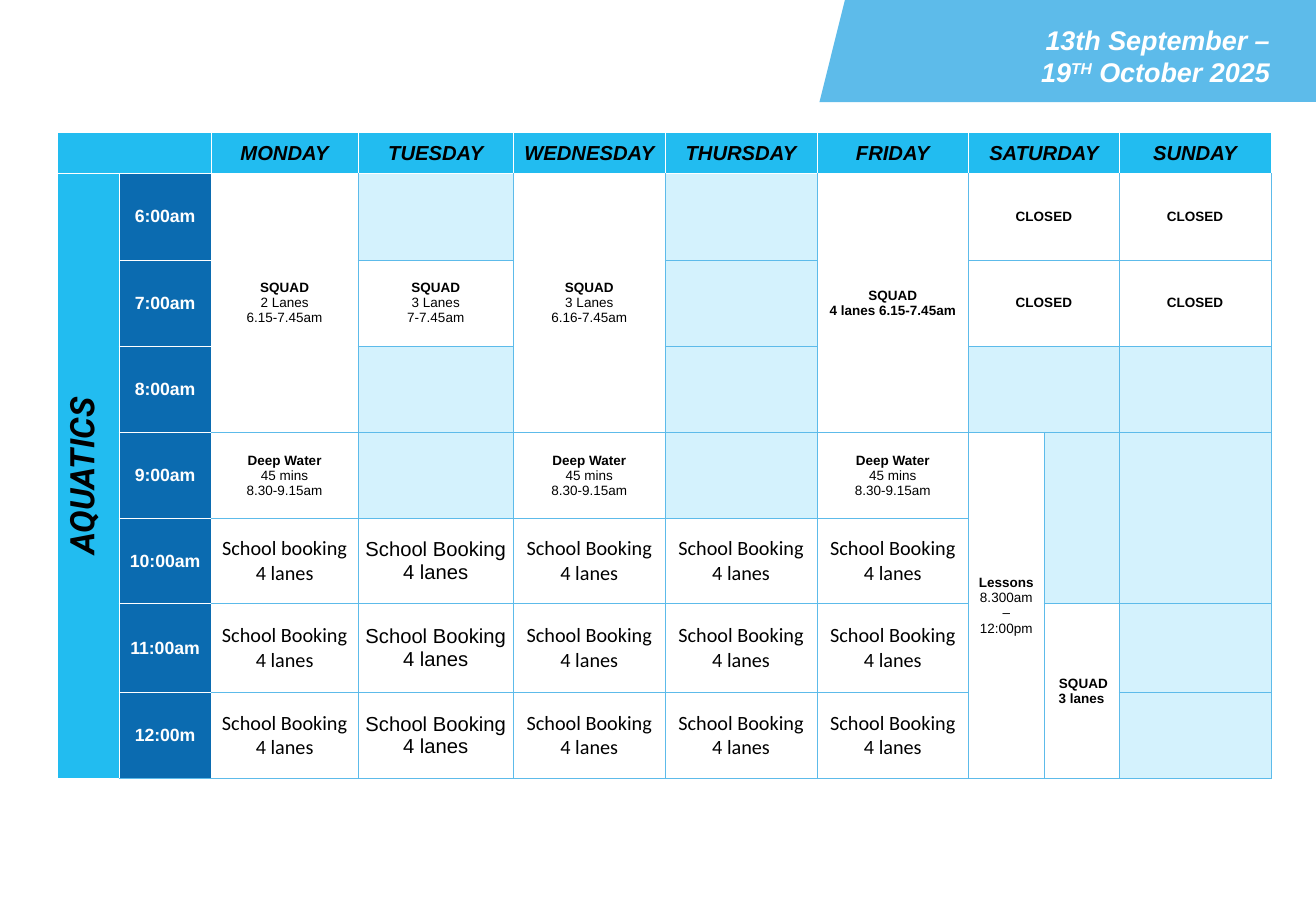
"""Build the weekly aquatics timetable slide."""
from typing import Any, NamedTuple

from lxml.etree import SubElement
from pptx import Presentation
from pptx.dml.color import RGBColor
from pptx.enum.shapes import MSO_SHAPE
from pptx.enum.text import MSO_ANCHOR, PP_ALIGN
from pptx.oxml.ns import qn
from pptx.table import Table, _Cell
from pptx.util import Inches, Pt

BANNER_BLUE = RGBColor(0x5D, 0xBB, 0xEA)
HEADER_BLUE = RGBColor(0x22, 0xBC, 0xF0)
TIME_BLUE = RGBColor(0x0B, 0x6B, 0xB0)
PALE_BLUE = RGBColor(0xD4, 0xF2, 0xFD)
WHITE = RGBColor(0xFF, 0xFF, 0xFF)
BLACK = RGBColor(0x00, 0x00, 0x00)

DATES = {"name": "Arial", "size": Pt(16), "bold": True, "italic": True}
DAY = DATES | {"size": Pt(12)}
AREA = DATES | {"name": "Roboto", "size": Pt(20)}
TIME = {"name": "Arial", "size": Pt(10.5), "bold": True}
STRONG = {"name": "Arial", "size": Pt(8), "bold": True}
DETAIL = STRONG | {"bold": False}
SCHOOL = {"name": "Calibri", "size": Pt(12), "bold": False}
SCHOOL_ARIAL = SCHOOL | {"name": "Arial"}

COLUMN_WIDTHS = (0.51, 0.76, 1.21, 1.28, 1.25, 1.25, 1.25, 0.62, 0.62, 1.25)
ROW_HEIGHTS = (0.34, 0.71, 0.71, 0.71, 0.71, 0.7, 0, 0.73, 0.71)
DAY_COLUMNS = {"MONDAY": 2, "TUESDAY": 3, "WEDNESDAY": 4, "THURSDAY": 5,
               "FRIDAY": 6, "SATURDAY": 7, "SUNDAY": 9}
TIME_ROWS = {"6:00am": 1, "7:00am": 2, "8:00am": 3, "9:00am": 4,
             "10:00am": 5, "11:00am": 7, "12:00m": 8}
TEN_AM_ROW = TIME_ROWS["10:00am"]
LAST_ROW = len(ROW_HEIGHTS) - 1


class Entry(NamedTuple):
    """A timetable cell: its place, lines, span and look."""
    row: int
    column: int
    lines: tuple[str, ...] = ()
    rows: int = 1
    columns: int = 1
    first: dict[str, Any] = STRONG
    rest: dict[str, Any] = DETAIL
    fill: RGBColor = WHITE
    ink: RGBColor = BLACK
    margins: tuple[float, float] = (0.05, 0)


def timetable_entries() -> list[Entry]:
    """List every cell that has text or spans several grid places."""
    entries = [
        Entry(0, 0, columns=2, fill=HEADER_BLUE),
        Entry(1, 0, ("AQUATICS",), 8, first=AREA, fill=HEADER_BLUE, margins=(0.04, 0.05)),
        Entry(1, 2, ("SQUAD", "2 Lanes", "6.15-7.45am"), 3),
        Entry(2, 3, ("SQUAD", "3 Lanes", "7-7.45am")),
        Entry(1, 4, ("SQUAD", "3 Lanes", "6.16-7.45am"), 3),
        Entry(1, 6, ("SQUAD", "4 lanes 6.15-7.45am"), 3, rest=STRONG),
        Entry(3, 7, columns=2, fill=PALE_BLUE),
        Entry(4, 7, ("Lessons", "8.300am – 12:00pm"), 5),
        Entry(4, 8, rows=2, fill=PALE_BLUE),
        Entry(4, 9, rows=2, fill=PALE_BLUE),
        Entry(6, 8, (" SQUAD", "3 lanes"), 3, rest=STRONG),
        Entry(6, 9, rows=2, fill=PALE_BLUE),
    ]
    for day, column in DAY_COLUMNS.items():
        span = 2 if day == "SATURDAY" else 1
        entries.append(Entry(0, column, (day,), columns=span, first=DAY,
                             fill=HEADER_BLUE, margins=(0.01, 0.02)))
        if day in ("SATURDAY", "SUNDAY"):
            entries += [Entry(row, column, ("CLOSED",), columns=span) for row in (1, 2)]
    for time, row in TIME_ROWS.items():
        span = 2 if row == TEN_AM_ROW else 1
        entries.append(Entry(row, 1, (time,), span, first=TIME, fill=TIME_BLUE, ink=WHITE))
        if row < TEN_AM_ROW:
            continue
        for column in range(2, 7):
            booking = "booking" if (row, column) == (TEN_AM_ROW, 2) else "Booking"
            entries.append(Entry(row, column, (f"School {booking} 4 lanes",), span,
                                 first=SCHOOL_ARIAL if column == 3 else SCHOOL))
    entries += [Entry(4, column, ("Deep Water", "45 mins", "8.30-9.15am"))
                for column in (2, 4, 6)]
    return entries


def apply_format(font: Any, values: dict[str, Any], ink: RGBColor) -> None:
    """Set font attributes and colour."""
    for attribute, value in values.items():
        setattr(font, attribute, value)
    font.color.rgb = ink


def add_borders(cell: _Cell, row: int, column: int) -> None:
    """Draw white edges around the headings and blue edges elsewhere."""
    heading = row == 0 or column <= 1
    white_edges = {
        "a:lnL": heading or column == 2,
        "a:lnR": heading,
        "a:lnT": heading or row == 1,
        "a:lnB": heading and row < LAST_ROW,
    }
    properties = cell._tc.get_or_add_tcPr()
    for edge, is_white in white_edges.items():
        line = SubElement(properties, qn(edge), w=str(Pt(0.5)))
        solid = SubElement(line, qn("a:solidFill"))
        SubElement(solid, qn("a:srgbClr"), val=str(WHITE if is_white else BANNER_BLUE))


def fill_entry(table: Table, entry: Entry) -> None:
    """Merge, colour and write one timetable cell."""
    cell = table.cell(entry.row, entry.column)
    if entry.rows * entry.columns > 1:
        cell.merge(table.cell(entry.row + entry.rows - 1, entry.column + entry.columns - 1))
    cell.fill.solid()
    cell.fill.fore_color.rgb = entry.fill
    side, end = map(Inches, entry.margins)
    cell.margin_left = cell.margin_right = side
    cell.margin_top = cell.margin_bottom = end
    for index, text in enumerate(entry.lines):
        paragraph = cell.text_frame.add_paragraph() if index else cell.text_frame.paragraphs[0]
        paragraph.alignment = PP_ALIGN.CENTER
        run = paragraph.add_run()
        run.text = text
        apply_format(run.font, entry.rest if index else entry.first, entry.ink)
    if entry.first is AREA:
        cell._tc.get_or_add_tcPr().set("vert", "vert270")


def add_timetable(shapes: Any) -> None:
    """Add the timetable grid and its entries."""
    table = shapes.add_table(len(ROW_HEIGHTS), len(COLUMN_WIDTHS), Inches(0.47), Inches(1.09),
                             Inches(10), Inches(sum(ROW_HEIGHTS))).table
    table.first_row = table.horz_banding = False
    for column, width in zip(table.columns, COLUMN_WIDTHS):
        column.width = Inches(width)
    for row, height in zip(table.rows, ROW_HEIGHTS):
        row.height = Inches(height)
    for row in range(len(ROW_HEIGHTS)):
        for column in range(len(COLUMN_WIDTHS)):
            cell = table.cell(row, column)
            add_borders(cell, row, column)
            cell.fill.solid()
            cell.fill.fore_color.rgb = PALE_BLUE
            cell.margin_top = cell.margin_bottom = 0
            cell.vertical_anchor = MSO_ANCHOR.MIDDLE
    for entry in timetable_entries():
        fill_entry(table, entry)


def add_banner(shapes: Any) -> None:
    """Add the slanted banner in the top right corner."""
    for kind, left, width in ((MSO_SHAPE.PARALLELOGRAM, 6.75, 2.52),
                              (MSO_SHAPE.RECTANGLE, 7.28, 3.56)):
        panel = shapes.add_shape(kind, Inches(left), 0, Inches(width), Inches(0.84))
        panel.shadow.inherit = False
        panel.fill.solid()
        panel.fill.fore_color.rgb = BANNER_BLUE
        panel.line.fill.background()


def add_dates(shapes: Any) -> None:
    """Add the date range on the banner."""
    frame = shapes.add_textbox(Inches(6.59), Inches(0.19), Inches(3.87), Inches(0.54)).text_frame
    frame.word_wrap = True
    frame.margin_left = frame.margin_right = frame.margin_top = frame.margin_bottom = 0
    paragraph = frame.paragraphs[0]
    paragraph.alignment = PP_ALIGN.RIGHT
    for text in ("13th September –", "19", "TH", " October 2025"):
        if text == "19":
            paragraph.add_line_break()
        run = paragraph.add_run()
        run.text = text
        apply_format(run.font, DATES, WHITE)
        if text == "TH":
            run._r.get_or_add_rPr().set("baseline", "30000")


def main() -> None:
    """Create and save the slide."""
    presentation = Presentation()
    presentation.slide_width = Inches(10.84)
    presentation.slide_height = Inches(7.5)
    shapes = presentation.slides.add_slide(presentation.slide_layouts[6]).shapes
    add_banner(shapes)
    add_timetable(shapes)
    add_dates(shapes)
    presentation.save("out.pptx")


if __name__ == "__main__":
    main()
